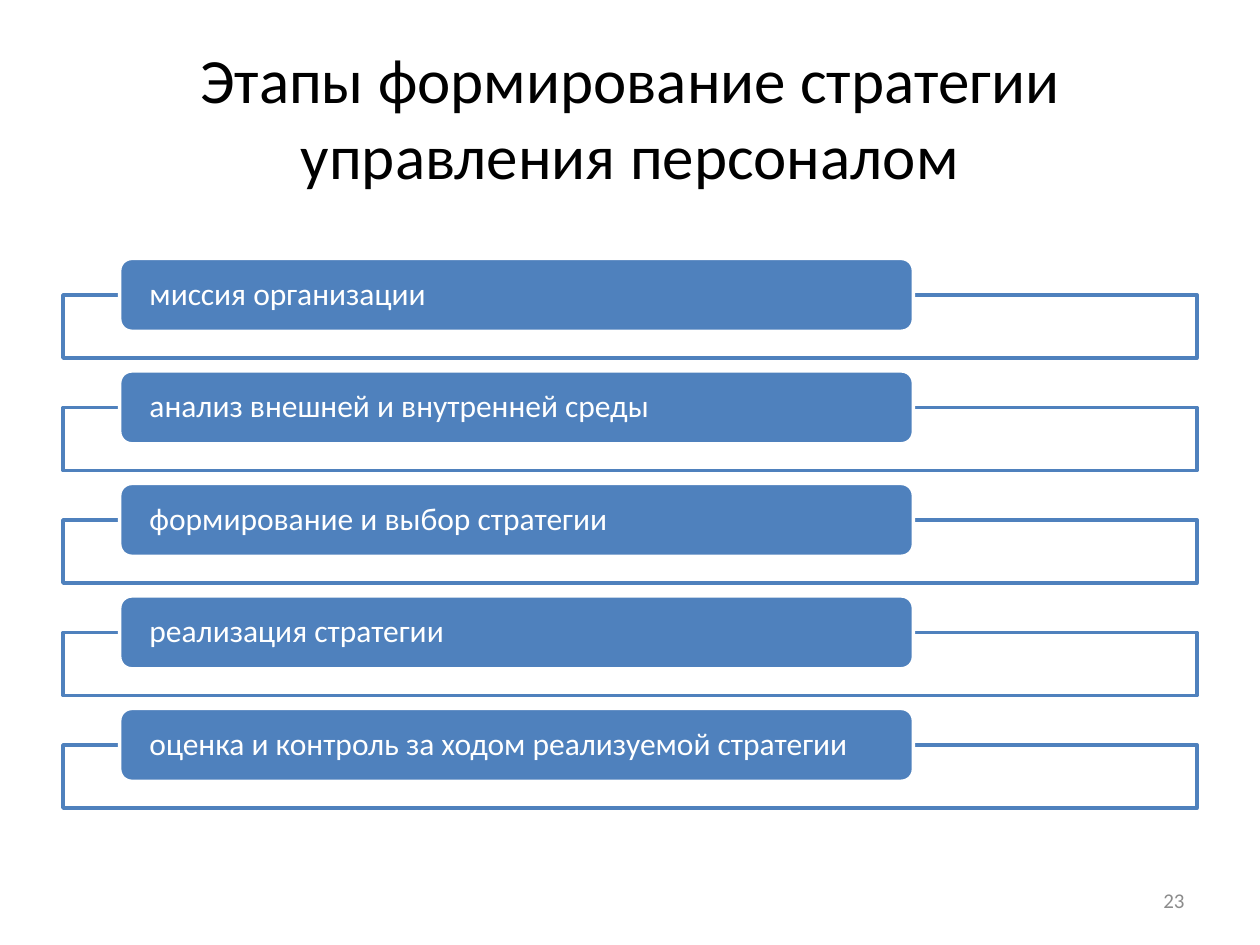
from dataclasses import dataclass

from lxml import etree
from pptx import Presentation
from pptx.dml import color
from pptx.enum import shapes, text
from pptx.oxml import ns
from pptx.util import Cm, Pt


@dataclass(frozen=True)
class Theme:
    font: str = "Calibri"
    ink: str = "000000"
    blue: str = "4F81BD"
    white: str = "FFFFFF"
    gray: str = "8C8C8C"
    head: int = 36
    body: int = 18
    note: int = 12
    line: int = 2


THEME = Theme()
STEPS = (
    "миссия организации",
    "анализ внешней и внутренней среды",
    "формирование и выбор стратегии",
    "реализация стратегии",
    "оценка и контроль за ходом реализуемой стратегии",
)


def rgb(code):
    return color.RGBColor.from_string(code)


def write(shape, words, size, ink, align="LEFT", side=0.25, edge=0.13, lead=1.0):
    """Put one formatted paragraph into a shape, centred in height."""
    frame = shape.text_frame
    frame.word_wrap = True
    frame.vertical_anchor = text.MSO_ANCHOR.MIDDLE
    frame.margin_left = frame.margin_right = Cm(side)
    frame.margin_top = frame.margin_bottom = Cm(edge)
    para = frame.paragraphs[0]
    para.alignment = getattr(text.PP_ALIGN, align)
    para.line_spacing = lead
    run = para.add_run()
    run.text = words
    run.font.name = THEME.font
    run.font.size = Pt(size)
    run.font.color.rgb = rgb(ink)


def label(slide, box, words, **style):
    write(slide.shapes.add_textbox(*map(Cm, box)), words, **style)


def block(slide, kind, box, fill, line):
    shape = slide.shapes.add_shape(kind, *map(Cm, box))
    shape.shadow.inherit = False
    shape.fill.solid()
    shape.fill.fore_color.rgb = rgb(fill)
    shape.line.color.rgb = rgb(line)
    shape.line.width = Pt(THEME.line)
    return shape


def fade(shape, share):
    """Set the opacity of a solid fill, in percent."""
    tone = shape.element.spPr.find(ns.qn("a:solidFill"))[0]
    etree.SubElement(tone, ns.qn("a:alpha")).set("val", str(share * 1000))


def step(slide, box, words):
    """One stage: an open frame with a bar lying over its top edge."""
    left, top, width, high = box
    tall = 1.47  # bar height
    frame = block(slide, shapes.MSO_SHAPE.RECTANGLE,
                  (left, top + tall / 2, width, high - tall / 2),
                  THEME.white, THEME.blue)
    fade(frame, 90)
    bar = block(slide, shapes.MSO_SHAPE.ROUNDED_RECTANGLE,
                (left + width * 0.05, top, width * 0.7, tall),
                THEME.blue, THEME.white)
    write(bar, words, THEME.body, THEME.white, side=0.53, edge=0, lead=0.9)


def stages(slide, box):
    """Stack the stages at an equal pitch down the box."""
    left, top, width, high = box
    gap = 0.26
    each = (high + gap) / len(STEPS) - gap
    for row, words in enumerate(STEPS):
        step(slide, (left, top + row * (each + gap), width, each), words)


def main():
    deck = Presentation()
    deck.slide_width, deck.slide_height = Cm(25.4), Cm(19.05)
    slide = deck.slides.add_slide(deck.slide_layouts[6])

    # Title
    label(slide, (1.27, 0.76, 22.86, 3.18),
          "Этапы формирование стратегии управления персоналом",
          size=THEME.head, ink=THEME.ink, align="CENTER")

    # Stages
    stages(slide, (1.27, 5.21, 22.86, 11.08))

    # Page number
    label(slide, (18.2, 17.65, 5.93, 1.01), "23",
          size=THEME.note, ink=THEME.gray, align="RIGHT")

    deck.save("out.pptx")


if __name__ == "__main__":
    main()
